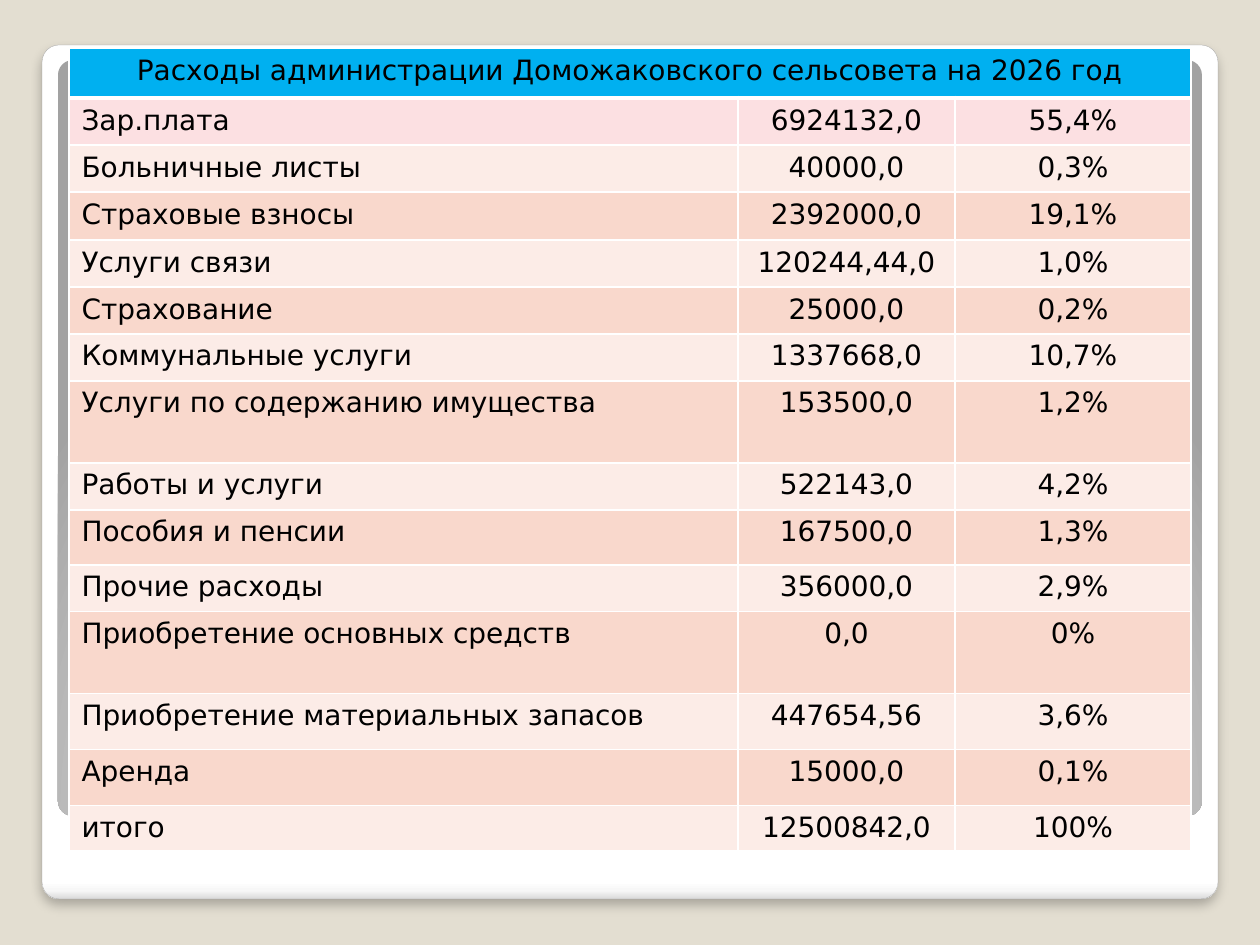
import pptx
import pptx.dml.color
import pptx.enum.shapes
import pptx.enum.text
import pptx.oxml
import pptx.oxml.ns
import pptx.util

RGB = pptx.dml.color.RGBColor
BACKDROP = RGB(0xE3, 0xDE, 0xD1)
WHITE = RGB(0xFF, 0xFF, 0xFF)
BLACK = RGB(0x00, 0x00, 0x00)
NEAR_WHITE = RGB(0xF7, 0xF7, 0xF7)
EDGE_GREY = RGB(0xDA, 0xDA, 0xDA)
OUTLINE_GREY = RGB(0xA4, 0xA4, 0xA4)
MID_GREY = RGB(0xE1, 0xE1, 0xE1)
DARK_GREY = RGB(0xA2, 0xA2, 0xA2)
HEADER_BLUE = RGB(0x00, 0xB0, 0xF0)
PINK = RGB(0xFC, 0xE0, 0xE2)
LIGHT_BAND = RGB(0xFC, 0xEC, 0xE7)
DARK_BAND = RGB(0xF9, 0xD8, 0xCC)

HEADING = "Расходы администрации Доможаковского сельсовета на 2026 год"
EXPENSES = [  # item, amount, share, row height in px
    ("Зар.плата", "6924132,0", "55,4%", 47),
    ("Больничные листы", "40000,0", "0,3%", 47),
    ("Страховые взносы", "2392000,0", "19,1%", 48),
    ("Услуги связи", "120244,44,0", "1,0%", 47),
    ("Страхование", "25000,0", "0,2%", 47),
    ("Коммунальные услуги", "1337668,0", "10,7%", 47),
    ("Услуги по содержанию имущества", "153500,0", "1,2%", 82),
    ("Работы и услуги", "522143,0", "4,2%", 47),
    ("Пособия и пенсии", "167500,0", "1,3%", 55),
    ("Прочие расходы", "356000,0", "2,9%", 47),
    ("Приобретение основных средств", "0,0", "0%", 82),
    ("Приобретение материальных запасов", "447654,56", "3,6%", 56),
    ("Аренда", "15000,0", "0,1%", 56),
    ("итого", "12500842,0", "100%", 45),
]
HEADING_HEIGHT = 50
COLUMN_WIDTHS = (669, 217, 236)


def px(length):
    return pptx.util.Emu(length * 914400 // 126)


def drawing(tag, inner="", **attributes):
    """Build one DrawingML element."""
    listed = "".join(f' {name}="{value}"' for name, value in attributes.items())
    namespace = pptx.oxml.ns.nsdecls("a")
    return pptx.oxml.parse_xml(f"<a:{tag} {namespace}{listed}>{inner}</a:{tag}>")


class SlideBuilder:
    font = "DejaVu Sans"
    size = pptx.util.Pt(16)

    def __init__(self, slide):
        self.slide = slide

    def background(self, color):
        self.slide.background.fill.solid()
        self.slide.background.fill.fore_color.rgb = color

    def panel(self, box, stops, direction):
        """Rounded panel with a gradient; stops are (percent, colour)."""
        panel = self.slide.shapes.add_shape(
            pptx.enum.shapes.MSO_SHAPE.ROUNDED_RECTANGLE, *map(px, box))
        panel.adjustments[0] = 0.02
        panel.shadow.inherit = False
        panel.line.fill.background()
        panel.fill.gradient()
        gradient = panel.element.spPr.find(pptx.oxml.ns.qn("a:gradFill"))
        gradient.clear()
        inner = "".join(
            f'<a:gs pos="{percent * 1000}"><a:srgbClr val="{color}"/></a:gs>'
            for percent, color in stops)
        gradient.append(drawing("gsLst", inner))
        gradient.append(direction)
        return panel

    def drop_shadow(self, panel, color, opacity, blur, distance):
        effects = panel.element.spPr.find(pptx.oxml.ns.qn("a:effectLst"))
        effects.append(drawing(
            "outerShdw",
            f'<a:srgbClr val="{color}"><a:alpha val="{opacity * 1000}"/></a:srgbClr>',
            blurRad=pptx.util.Pt(blur), dist=pptx.util.Pt(distance),
            dir=90 * 60000, algn="t", rotWithShape=0))

    def table(self, left, top, widths, heights):
        table = self.slide.shapes.add_table(
            len(heights), len(widths), px(left), px(top),
            px(sum(widths)), px(sum(heights))).table
        for column, width in zip(table.columns, widths):
            column.width = px(width)
        for row, height in zip(table.rows, heights):
            row.height = px(height)
        return table

    def cell(self, cell, text, fill, centered=True, top=1, bottom=1):
        """Fill a cell; top and bottom are border widths in points."""
        cell.fill.solid()
        cell.fill.fore_color.rgb = fill
        cell.text = text
        paragraph = cell.text_frame.paragraphs[0]
        alignment = pptx.enum.text.PP_ALIGN
        paragraph.alignment = alignment.CENTER if centered else alignment.LEFT
        paragraph.font.name = self.font
        paragraph.font.size = self.size
        paragraph.font.bold = False
        paragraph.font.color.rgb = BLACK
        properties = cell._tc.get_or_add_tcPr()
        borders = {"lnL": 1, "lnR": 1, "lnT": top, "lnB": bottom}
        for index, (side, width) in enumerate(borders.items()):
            properties.insert(index, drawing(
                side, f'<a:solidFill><a:srgbClr val="{WHITE}"/></a:solidFill>',
                w=pptx.util.Pt(width)))


def main():
    deck = pptx.Presentation()
    deck.slide_width, deck.slide_height = px(1260), px(945)
    builder = SlideBuilder(deck.slides.add_slide(deck.slide_layouts[6]))
    builder.background(BACKDROP)

    # White card and the grey panel on it
    card = builder.panel(
        (42, 45, 1176, 854),
        [(0, WHITE), (98, WHITE), (99, NEAR_WHITE), (100, EDGE_GREY)],
        drawing("lin", ang=90 * 60000, scaled=0))
    card.line.color.rgb = OUTLINE_GREY
    card.line.width = pptx.util.Pt(0.16)
    builder.drop_shadow(card, BLACK, opacity=25, blur=6, distance=4)
    builder.panel(
        (58, 60, 1144, 756),
        [(0, WHITE), (55, MID_GREY), (100, DARK_GREY)],
        drawing("path", '<a:fillToRect l="50000" t="175000" r="50000" b="-75000"/>',
                path="circle"))

    # Expense table: merged heading, then banded rows
    heights = [HEADING_HEIGHT] + [expense[-1] for expense in EXPENSES]
    expenses = builder.table(69, 48, COLUMN_WIDTHS, heights)
    expenses.cell(0, 0).merge(expenses.cell(0, len(COLUMN_WIDTHS) - 1))
    for column in range(len(COLUMN_WIDTHS)):
        builder.cell(expenses.cell(0, column), "" if column else HEADING,
                     HEADER_BLUE, bottom=3)
    for row, (*values, _) in enumerate(EXPENSES, start=1):
        band = PINK if row == 1 else DARK_BAND if row % 2 else LIGHT_BAND
        for column, value in enumerate(values):
            builder.cell(expenses.cell(row, column), value, band,
                         centered=column > 0, top=3 if row == 1 else 1)

    deck.save("out.pptx")


if __name__ == "__main__":
    main()
